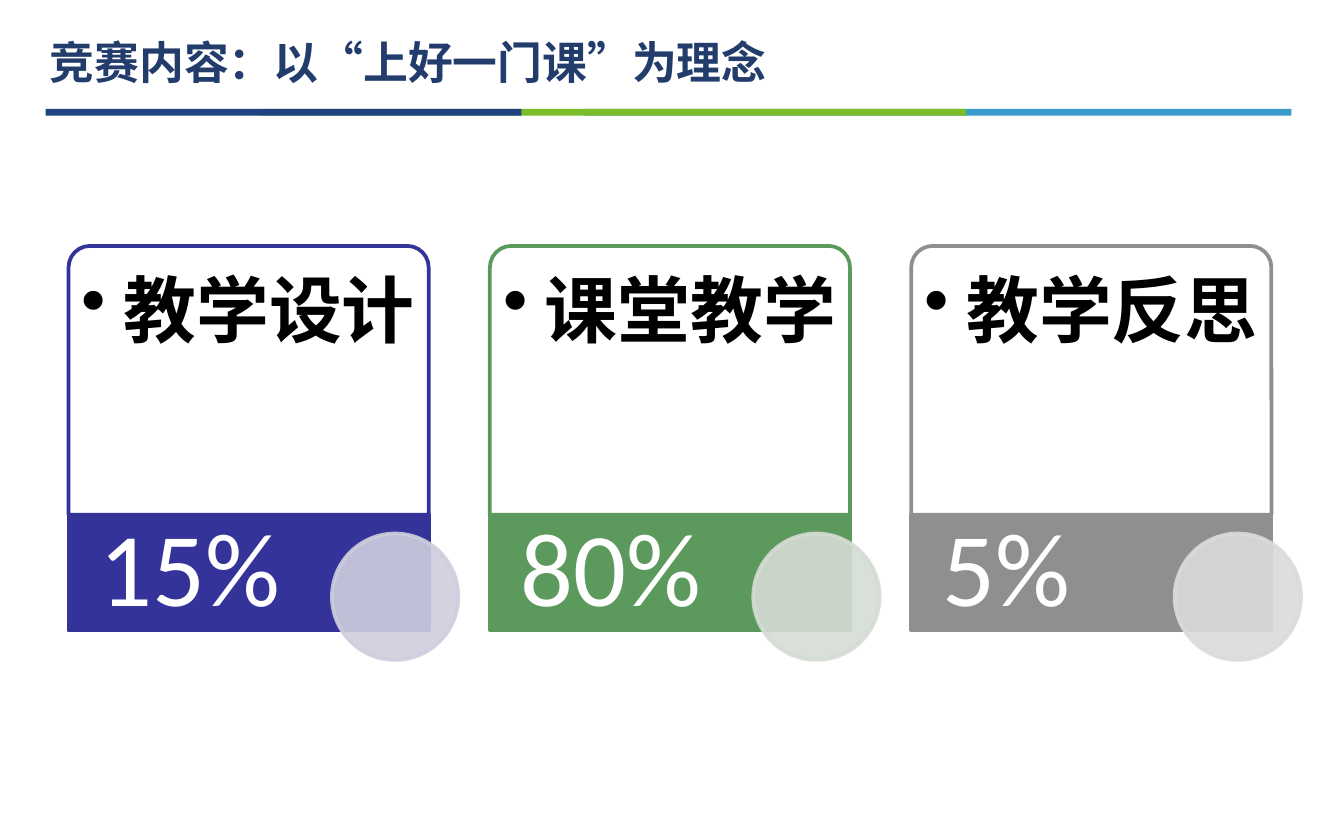
from lxml import etree
from pptx import Presentation
from pptx.dml.color import RGBColor
from pptx.enum.shapes import MSO_SHAPE
from pptx.enum.text import MSO_ANCHOR, MSO_AUTO_SIZE, PP_ALIGN
from pptx.oxml.ns import qn
from pptx.util import Inches, Pt

RECTANGLE = MSO_SHAPE.RECTANGLE
ROUND_TOP = MSO_SHAPE.ROUND_2_SAME_RECTANGLE
OVAL = MSO_SHAPE.OVAL
TOP, MIDDLE = MSO_ANCHOR.TOP, MSO_ANCHOR.MIDDLE
NO_AUTOFIT = MSO_AUTO_SIZE.NONE
LEFT = PP_ALIGN.LEFT

TITLE_ONLY = 5
CJK_FONT, LATIN_FONT = "Noto Sans CJK SC", "Calibri"
COLORS = {
    "title": "223C6C", "text": "000000", "white": "FFFFFF",
    "bar_navy": "1E4380", "bar_green": "7BBC28", "bar_blue": "389BCC",
    "design": "333399", "design_light": "CECEDE",
    "class": "5C995C", "class_light": "D5DCD5",
    "reflection": "8F8F8F", "reflection_light": "DBDBDB",
}
CARDS = [
    ("教学设计", "15%", "design"),
    ("课堂教学", "80%", "class"),
    ("教学反思", "5%", "reflection"),
]


def paint(fill, color, opacity=100):
    fill.solid()
    fill.fore_color.rgb = RGBColor.from_string(COLORS[color])
    if opacity < 100:
        for element in fill._xPr.iter(qn("a:srgbClr")):
            etree.SubElement(element, qn("a:alpha")).set("val", str(opacity * 1000))


def add_block(slide, kind, box, color, line=None, opacity=100, line_opacity=100):
    shape = slide.shapes.add_shape(kind, *(Inches(value) for value in box))
    shape.shadow.inherit = False
    paint(shape.fill, color, opacity)
    if line:
        shape.line.width = Pt(2)
        paint(shape.line.fill, line, line_opacity)
    else:
        shape.line.fill.background()
    return shape


def set_text(shape, text, *, size, color, font, bold=False, anchor=TOP,
             insets=(0.1, 0.05, 0.1, 0.05), wrap=True, spacing=1.0, bullet_indent=0):
    frame = shape.text_frame
    frame.auto_size = NO_AUTOFIT
    frame.word_wrap = wrap
    frame.vertical_anchor = anchor
    (frame.margin_left, frame.margin_top,
     frame.margin_right, frame.margin_bottom) = (Inches(inset) for inset in insets)
    paragraph = frame.paragraphs[0]
    paragraph.alignment = LEFT
    paragraph.line_spacing = spacing
    paragraph.space_before = Pt(0)
    if bullet_indent:
        paragraph.level = 1
        properties = paragraph._p.get_or_add_pPr()
        properties.set("marL", str(Inches(bullet_indent)))
        properties.set("indent", str(-Inches(bullet_indent)))
        etree.SubElement(properties, qn("a:buChar")).set("char", "•")
    run = paragraph.add_run()
    run.text = text
    run.font.size = Pt(size)
    run.font.bold = bold
    run.font.name = font
    run.font.color.rgb = RGBColor.from_string(COLORS[color])
    east_asian = etree.SubElement(run._r.get_or_add_rPr(), qn("a:ea"))
    east_asian.set("typeface", CJK_FONT)


def add_text(slide, box, text, **text_format):
    shape = slide.shapes.add_textbox(*(Inches(value) for value in box))
    set_text(shape, text, **text_format)


def add_header(slide, left, top, width):
    # Title
    title = slide.shapes.title
    title.left, title.top = Inches(left - 0.07), Inches(top)
    title.width, title.height = Inches(5.59), Inches(0.5)
    set_text(title, "竞赛内容：以“上好一门课”为理念", size=24, color="title",
             font=CJK_FONT, bold=True, anchor=MIDDLE, wrap=False)

    # Three-colour rule, overlapping from right to left
    segments = [("bar_blue", 4.01, width - 4.01), ("bar_green", 1.59, 5.26),
                ("bar_navy", 0, 3.54)]
    for color, offset, length in segments:
        add_block(slide, RECTANGLE, (left + offset, top + 0.6, length, 0.05), color)


def add_card(slide, left, top, width, name, share, color):
    body_height, band_height, circle = 2.0, 0.86, 0.94
    band_top = top + body_height

    # Rounded body with its subject
    body = add_block(slide, ROUND_TOP, (left, top, width, body_height),
                     "white", color, opacity=90)
    body.adjustments[0], body.adjustments[1] = 0.08, 0
    add_text(slide, (left + 0.05, top + 0.05, width - 0.09, body_height - 0.04), name,
             size=39, color="text", font=CJK_FONT, bold=True, spacing=0.9,
             insets=(0.05, 0.16, 0.05, 0.05), bullet_indent=0.31)

    # Band with its share
    add_block(slide, RECTANGLE, (left, band_top, width, band_height), color, color)
    add_text(slide, (left, band_top, 1.89, band_height), share,
             size=56, color="white", font=LATIN_FONT, anchor=MIDDLE, spacing=0.9,
             insets=(0.23, 0, 0.08, 0))

    # Circle over the corner
    light = f"{color}_light"
    add_block(slide, OVAL, (left + 1.96, band_top + 0.14, circle, circle),
              light, light, opacity=90, line_opacity=90)


def main():
    presentation = Presentation()
    presentation.slide_width, presentation.slide_height = Inches(10), Inches(6.25)
    slide = presentation.slides.add_slide(presentation.slide_layouts[TITLE_ONLY])
    add_header(slide, 0.34, 0.21, 9.27)
    for index, card in enumerate(CARDS):
        add_card(slide, 0.51 + index * 3.135, 1.83, 2.68, *card)
    presentation.save("out.pptx")


if __name__ == "__main__":
    main()
